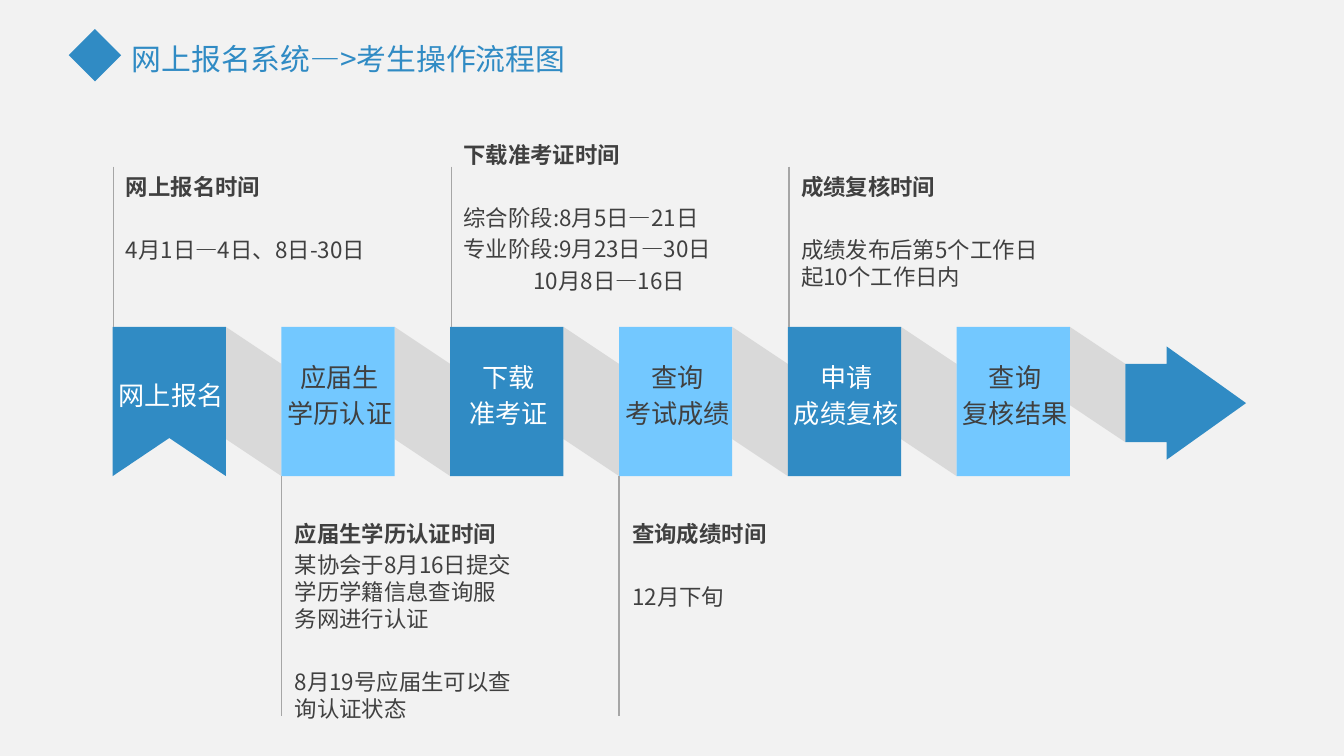
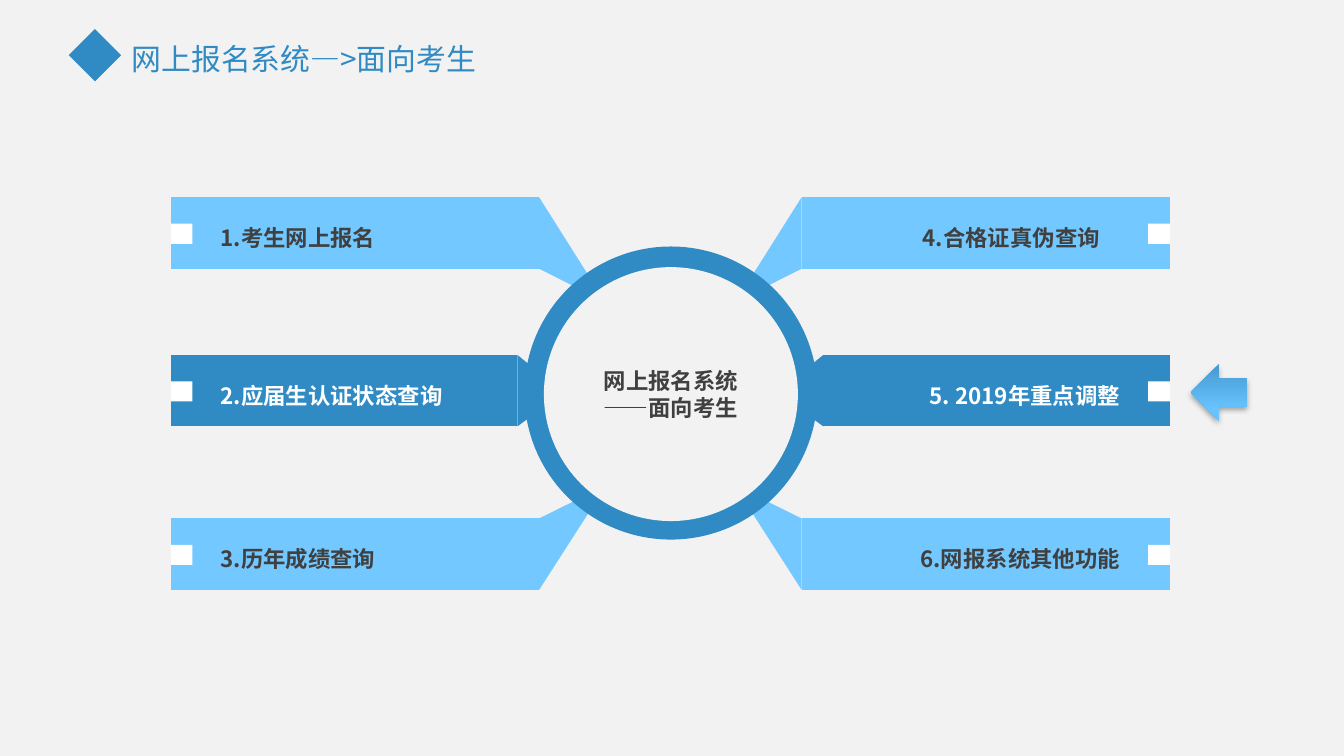
import pptx
import pptx.util
import pptx.dml.color
import pptx.enum.shapes
import pptx.enum.text
import pptx.oxml
import pptx.oxml.ns
from lxml import etree

Cm, Pt = pptx.util.Cm, pptx.util.Pt
RGBColor = pptx.dml.color.RGBColor
SHAPE = pptx.enum.shapes.MSO_SHAPE
ALIGN = pptx.enum.text.PP_ALIGN
ANCHOR = pptx.enum.text.MSO_ANCHOR
FIT = pptx.enum.text.MSO_AUTO_SIZE
qn = pptx.oxml.ns.qn

# Shared look
FONT = "Noto Sans CJK SC"
PALE = RGBColor(0xF2, 0xF2, 0xF2)
BLUE = RGBColor(0x30, 0x8B, 0xC4)
SKY = RGBColor(0x73, 0xC8, 0xFF)
FOLD = RGBColor(0xD9, 0xD9, 0xD9)
RULE = RGBColor(0xA6, 0xA6, 0xA6)
INK = RGBColor(0x40, 0x40, 0x40)
WHITE = RGBColor(0xFF, 0xFF, 0xFF)
TITLE_ONLY = 5
LINE_HEIGHT = 1.2
PARA_GAP = 0.2

# Process slide: a row of steps (cm)
STEP_LEFT, STEP_TOP, STEP_PITCH = 2.13, 6.18, 3.19
STEP_WIDTH, STEP_BOTTOM, FOLD_DROP = 2.14, 9.0, 0.7
STEPS = [["网上报名"], ["应届生", "学历认证"], ["下载", "准考证"],
         ["查询", "考试成绩"], ["申请", "成绩复核"], ["查询", "复核结果"]]

# Step number, top, width, height, heading, then (text, gap above, indent)
NOTES = [
    (0, 3.15, 5.33, 2.59, "网上报名时间", [("4月1日—4日、8日-30日", True, 0)]),
    (1, 9.7, 4.6, 3.45, "应届生学历认证时间",
     [("某协会于8月16日提交学历学籍信息查询服务网进行认证", False, 0),
      ("8月19号应届生可以查询认证状态", True, 0)]),
    (2, 2.54, 5.61, 3.2, "下载准考证时间",
     [("综合阶段:8月5日—21日", True, 0),
      ("专业阶段:9月23日—30日", False, 0),
      ("10月8日—16日", False, 1.32)]),
    (3, 9.7, 4.6, 3.45, "查询成绩时间", [("12月下旬", True, 0)]),
    (4, 3.15, 5.33, 2.59, "成绩复核时间",
     [("成绩发布后第5个工作日起10个工作日内", True, 0)]),
]

# Menu slide: three rows mirrored about an axis (cm)
AXIS, BAR_LEFT, BAR_HEIGHT = 12.67, 3.23, 1.35
# Top, inner end, colour, text colour, tail tip, left label, right label, right inset
MENU_ROWS = [
    (3.73, 10.19, SKY, INK, [(11.25, 5.41), (11.1, 5.54)],
     "1.考生网上报名", "4.合格证真伪查询", 0.38),
    (6.71, 9.78, BLUE, WHITE, [(10.49, 7.29), (10.49, 7.54)],
     "2.应届生认证状态查询", "5. 2019年重点调整", 0),
    (9.8, 10.19, SKY, INK, [(11.1, 9.35), (11.25, 9.5)],
     "3.历年成绩查询", "6.网报系统其他功能", 0),
]


def apply(target, values):
    for name, value in values.items():
        setattr(target, name, value)


def paint(shape, colour):
    shape.fill.solid()
    shape.fill.fore_color.rgb = colour
    shape.line.fill.background()
    shape.shadow.inherit = False
    return shape


def add_preset(page, kind, left, top, width, height, colour):
    return paint(page.shapes.add_shape(kind, Cm(left), Cm(top), Cm(width), Cm(height)), colour)


def add_polygon(page, points, colour):
    points = [(Cm(x), Cm(y)) for x, y in points]
    builder = page.shapes.build_freeform(*points[0])
    builder.add_line_segments(points[1:], close=True)
    return paint(builder.convert_to_shape(), colour)


def add_rule(page, x, top, bottom):
    rule = page.shapes.add_connector(pptx.enum.shapes.MSO_CONNECTOR.STRAIGHT,
                                     Cm(x), Cm(top), Cm(x), Cm(bottom))
    rule.line.color.rgb = RULE
    rule.line.width = Pt(0.75)
    etree.SubElement(rule._element.spPr, qn("a:effectLst"))


def set_frame(box, insets, anchor=ANCHOR.TOP, fit=FIT.NONE):
    left, top, right, bottom = (Cm(inset) for inset in insets)
    apply(box.text_frame, {"word_wrap": True, "auto_size": fit, "vertical_anchor": anchor,
                           "margin_left": left, "margin_top": top,
                           "margin_right": right, "margin_bottom": bottom})


def add_line(box, text, size, colour, bold=False, align=ALIGN.LEFT, before=0.0, indent=0):
    """Write one paragraph; `before` is its gap as a share of the text size."""
    frame = box.text_frame
    para = frame.paragraphs[0] if not frame.text else frame.add_paragraph()
    apply(para, {"alignment": align, "line_spacing": Pt(size * LINE_HEIGHT),
                 "space_before": Pt(size * before), "space_after": Pt(0)})
    if indent:
        para._p.get_or_add_pPr().set("marL", str(Cm(indent)))
    span = para.add_run()
    span.text = text
    apply(span.font, {"name": FONT, "size": Pt(size), "bold": bold})
    span.font.color.rgb = colour
    etree.SubElement(span._r.get_or_add_rPr(), qn("a:ea")).set("typeface", FONT)


def add_box(page, left, top, width, height, insets, anchor=ANCHOR.TOP):
    box = page.shapes.add_textbox(Cm(left), Cm(top), Cm(width), Cm(height))
    set_frame(box, insets, anchor)
    return box


def add_page(deck, title):
    page = deck.slides.add_slide(deck.slide_layouts[TITLE_ONLY])
    page.background.fill.solid()
    page.background.fill.fore_color.rgb = PALE
    box = page.shapes.title
    apply(box, {"left": Cm(2.31), "top": Cm(0.67), "width": Cm(9.98), "height": Cm(0.86)})
    set_frame(box, (0.18, 0.1, 0.18, 0.1), fit=FIT.SHAPE_TO_FIT_TEXT)
    add_line(box, title, 16, BLUE)
    add_preset(page, SHAPE.DIAMOND, 1.3, 0.55, 0.99, 0.99, BLUE)
    return page


# Process slide
def step_x(number):
    return STEP_LEFT + number * STEP_PITCH


def add_fold(page, number):
    """Grey band that leads from one step to the next."""
    left, right = step_x(number) + STEP_WIDTH, step_x(number + 1)
    last = number == len(STEPS) - 1
    end = 8.36 if last else STEP_BOTTOM
    add_polygon(page, [(left, STEP_TOP), (right, STEP_TOP + FOLD_DROP),
                       (right, end), (left, end - FOLD_DROP)], FOLD)


def add_step(page, number, lines):
    left = step_x(number)
    right = left + STEP_WIDTH
    colour, ink = ((BLUE, WHITE), (SKY, INK))[number % 2]
    if number == 0:
        add_polygon(page, [(left, STEP_TOP), (right, STEP_TOP), (right, STEP_BOTTOM),
                           (left + STEP_WIDTH / 2, 8.28), (left, STEP_BOTTOM)], colour)
    else:
        add_preset(page, SHAPE.RECTANGLE, left, STEP_TOP, STEP_WIDTH,
                   STEP_BOTTOM - STEP_TOP, colour)
    box = add_box(page, left - 0.23, 6.53, 2.67, 1.88, (0, 0.13, 0, 0.13), ANCHOR.MIDDLE)
    for index, text in enumerate(lines):
        add_line(box, text, 14, ink, align=ALIGN.CENTER, before=PARA_GAP if index else 0)


def add_note(page, number, top, width, height, heading, lines):
    left = step_x(number)
    if top < STEP_TOP:
        add_rule(page, left + 0.02, 3.15, STEP_TOP)
    else:
        add_rule(page, left, STEP_BOTTOM, 13.54)
    box = add_box(page, left, top, width, height, (0.25, 0.13, 0.25, 0.13))
    add_line(box, heading, 12, INK, bold=True)
    for text, gap, indent in lines:
        before = 2 * PARA_GAP + LINE_HEIGHT if gap else PARA_GAP
        add_line(box, text, 12, INK, before=before, indent=indent)


def build_process(deck):
    page = add_page(deck, "网上报名系统—>考生操作流程图")
    for number in range(len(STEPS)):
        add_fold(page, number)
    tail = step_x(len(STEPS))
    add_polygon(page, [(tail, 6.88), (22.05, 6.88), (22.05, 6.55), (23.55, 7.62),
                       (22.05, 8.69), (22.05, 8.36), (tail, 8.36)], BLUE)
    for number, lines in enumerate(STEPS):
        add_step(page, number, lines)
    for note in NOTES:
        add_note(page, *note)


# Menu slide
def add_menu_bar(page, mirrored, row, label, inset):
    top, inner, colour, ink, tip = row
    bottom = top + BAR_HEIGHT

    def place(points):
        return [(2 * AXIS - x if mirrored else x, y) for x, y in points]

    def left_of(x, width):
        return 2 * AXIS - x - width if mirrored else x

    add_polygon(page, place([(BAR_LEFT, top), (inner, top),
                             (inner, bottom), (BAR_LEFT, bottom)]), colour)
    add_polygon(page, place([(inner, top), *tip, (inner, bottom)]), colour)
    add_preset(page, SHAPE.RECTANGLE, left_of(BAR_LEFT, 0.41), top + 0.5, 0.41, 0.38, WHITE)
    box = add_box(page, left_of(4.17, 5.44), top + 0.38, 5.44, 0.79, (0, 0.13, inset, 0.13))
    add_line(box, label, 12, ink, bold=True, align=ALIGN.RIGHT if mirrored else ALIGN.LEFT)


def add_pointer(page):
    """Shaded arrow that marks the fifth entry."""
    arrow = add_preset(page, SHAPE.RIGHT_ARROW, 22.5, 6.88, 1.07, 1.07, SKY)
    arrow.rotation = 180
    namespace = pptx.oxml.ns.nsdecls("a")
    stops = "".join(f'<a:gs pos="{position}"><a:srgbClr val="{colour}"/></a:gs>'
                    for position, colour in
                    ((0, "4699CE"), (80000, "68C3FF"), (100000, "69C4FF")))
    gradient = pptx.oxml.parse_xml(
        f'<a:gradFill {namespace} rotWithShape="1"><a:gsLst>{stops}</a:gsLst>'
        '<a:lin ang="16200000" scaled="0"/></a:gradFill>')
    shadow = pptx.oxml.parse_xml(
        f'<a:outerShdw {namespace} blurRad="{Pt(3.1)}" dist="{Pt(1.8)}" dir="5400000" '
        'rotWithShape="0"><a:srgbClr val="000000"><a:alpha val="35000"/></a:srgbClr>'
        '</a:outerShdw>')
    properties = arrow._element.spPr
    properties.replace(properties.find(qn("a:solidFill")), gradient)
    properties.find(qn("a:effectLst")).append(shadow)


def build_menu(deck):
    page = add_page(deck, "网上报名系统—>面向考生")
    for *row, left_label, right_label, inset in MENU_ROWS:
        add_menu_bar(page, False, row, left_label, 0)
        add_menu_bar(page, True, row, right_label, inset)
    add_preset(page, SHAPE.OVAL, 9.91, 4.66, 5.54, 5.54, BLUE)
    hub = add_preset(page, SHAPE.OVAL, 10.28, 5.05, 4.8, 4.8, PALE)
    set_frame(hub, (0, 0, 0, 0), ANCHOR.MIDDLE)
    for text in ("网上报名系统", "——面向考生"):
        add_line(hub, text, 12, INK, bold=True, align=ALIGN.CENTER)
    add_pointer(page)


def main():
    deck = pptx.Presentation()
    apply(deck, {"slide_width": Cm(25.4), "slide_height": Cm(14.29)})
    build_process(deck)
    build_menu(deck)
    deck.save("out.pptx")


if __name__ == "__main__":
    main()
